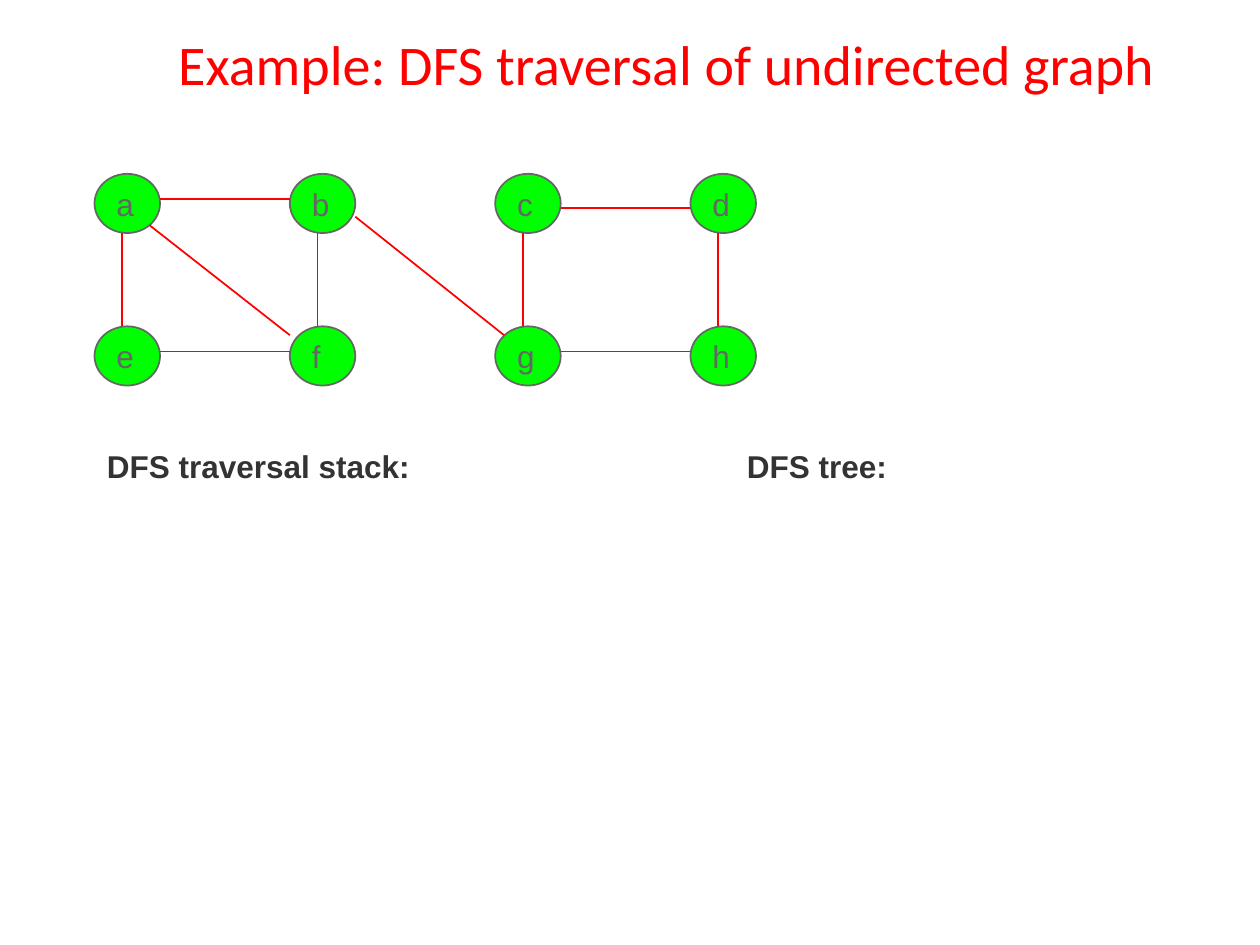
from dataclasses import dataclass

from lxml import etree
from pptx import Presentation
from pptx.dml.color import RGBColor as RGB
from pptx.enum.shapes import MSO_CONNECTOR as Connector, MSO_SHAPE as Shape
from pptx.enum.text import MSO_ANCHOR as Anchor, PP_ALIGN as Align
from pptx.oxml.ns import qn
from pptx.util import Inches, Pt


@dataclass(frozen=True)
class Theme:
    red: RGB = RGB(0xFF, 0x00, 0x00)
    green: RGB = RGB(0x00, 0xFF, 0x00)
    gray: RGB = RGB(0x66, 0x66, 0x66)
    dark: RGB = RGB(0x33, 0x33, 0x33)
    title_font: str = "Calibri"
    body_font: str = "Arial"
    title_size: int = 32
    body_size: int = 18
    line_width: int = 1


class GraphSlide:
    def __init__(self, slide, theme):
        self.slide = slide
        self.theme = theme
        self.graph = slide.shapes.add_group_shape()

    def set_text(self, text_frame, text, font, size, color, bold=False, align=Align.LEFT):
        text_frame.text = text
        paragraph = text_frame.paragraphs[0]
        paragraph.alignment = align
        run_font = paragraph.runs[0].font
        run_font.name, run_font.size, run_font.bold = font, Pt(size), bold
        run_font.color.rgb = color

    def text_box(self, left, top, width, height):
        box = self.slide.shapes.add_textbox(
            Inches(left), Inches(top), Inches(width), Inches(height))
        box.text_frame.word_wrap = True
        return box.text_frame

    def title(self, text, left, top, width, height):
        text_frame = self.text_box(left, top, width, height)
        text_frame.vertical_anchor = Anchor.MIDDLE
        self.set_text(text_frame, text, self.theme.title_font,
                      self.theme.title_size, self.theme.red, align=Align.CENTER)

    def heading(self, text, left, top, width, height):
        text_frame = self.text_box(left, top, width, height)
        self.set_text(text_frame, text, self.theme.body_font,
                      self.theme.body_size, self.theme.dark, bold=True)

    def node(self, text, left, top, width, height):
        shape = self.graph.shapes.add_shape(
            Shape.OVAL, Inches(left), Inches(top), Inches(width), Inches(height))
        shape.shadow.inherit = False
        shape.fill.solid()
        shape.fill.fore_color.rgb = self.theme.green
        shape.line.color.rgb = self.theme.gray
        shape.line.width = Pt(self.theme.line_width)
        shape.text_frame.word_wrap = False
        shape.text_frame.vertical_anchor = Anchor.MIDDLE
        self.set_text(shape.text_frame, text, self.theme.body_font,
                      self.theme.body_size, self.theme.gray)

    def edge(self, start, end):
        connector = self.graph.shapes.add_connector(
            Connector.STRAIGHT, *(Inches(value) for value in (*start, *end)))
        connector.line.color.rgb = self.theme.red
        connector.line.width = Pt(self.theme.line_width)
        etree.SubElement(connector._element.spPr, qn("a:effectLst"))


def main():
    presentation = Presentation()
    presentation.slide_width, presentation.slide_height = Inches(10), Inches(7.5)
    slide = presentation.slides.add_slide(presentation.slide_layouts[6])
    page = GraphSlide(slide, Theme())

    page.title("Example: DFS traversal of undirected graph", 0.58, 0.25, 9.42, 0.5)

    # Nodes: two rows of four
    columns, rows = (0.75, 2.3, 3.93, 5.48), (1.38, 2.59)
    width, height = 0.52, 0.47
    places = {}
    for names, top in zip(("abcd", "efgh"), rows):
        for name, left in zip(names, columns):
            places[name] = (left, top)
            page.node(name, left, top, width, height)

    # Horizontal edges: drop below the top of the nodes
    for first, second, drop in (("a", "b", 0.2), ("e", "f", 0.2),
                                ("c", "d", 0.27), ("g", "h", 0.2)):
        left, top = places[first]
        page.edge((left + width, top + drop), (places[second][0], top + drop))

    # Vertical edges
    for upper, lower in ("ae", "bf", "cg", "dh"):
        left, top = places[upper]
        page.edge((left + 0.22, top + height), (left + 0.22, places[lower][1]))

    # Diagonal edges: a to f, b to g
    page.edge((1.19, 1.79), (2.3, 2.66))
    page.edge((2.82, 1.72), (4, 2.66))

    # Headings
    for text, left in (("DFS traversal stack:", 0.75), ("DFS tree:", 5.83)):
        page.heading(text, left, 3.5, 3.25, 0.52)

    presentation.save("out.pptx")


if __name__ == "__main__":
    main()
